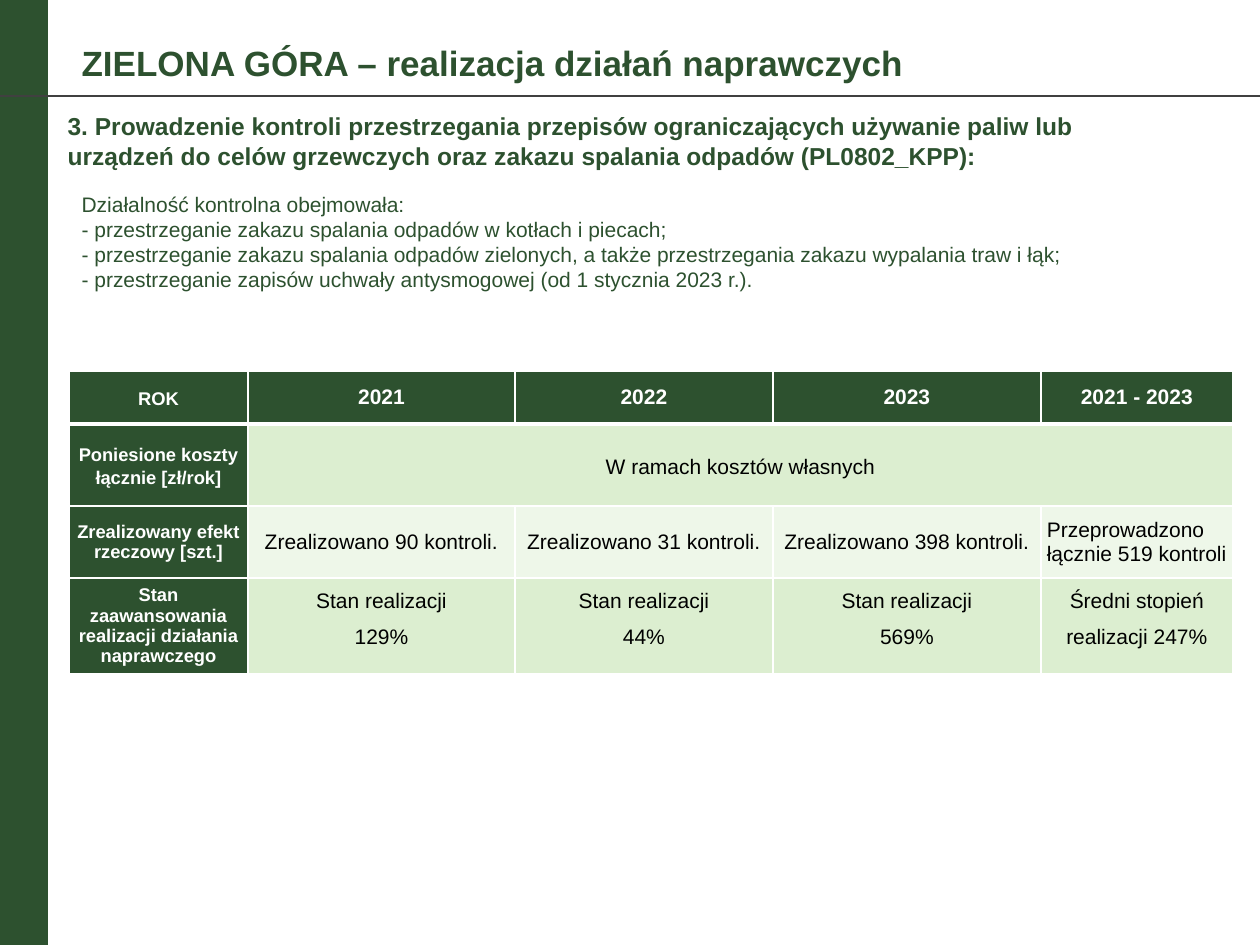
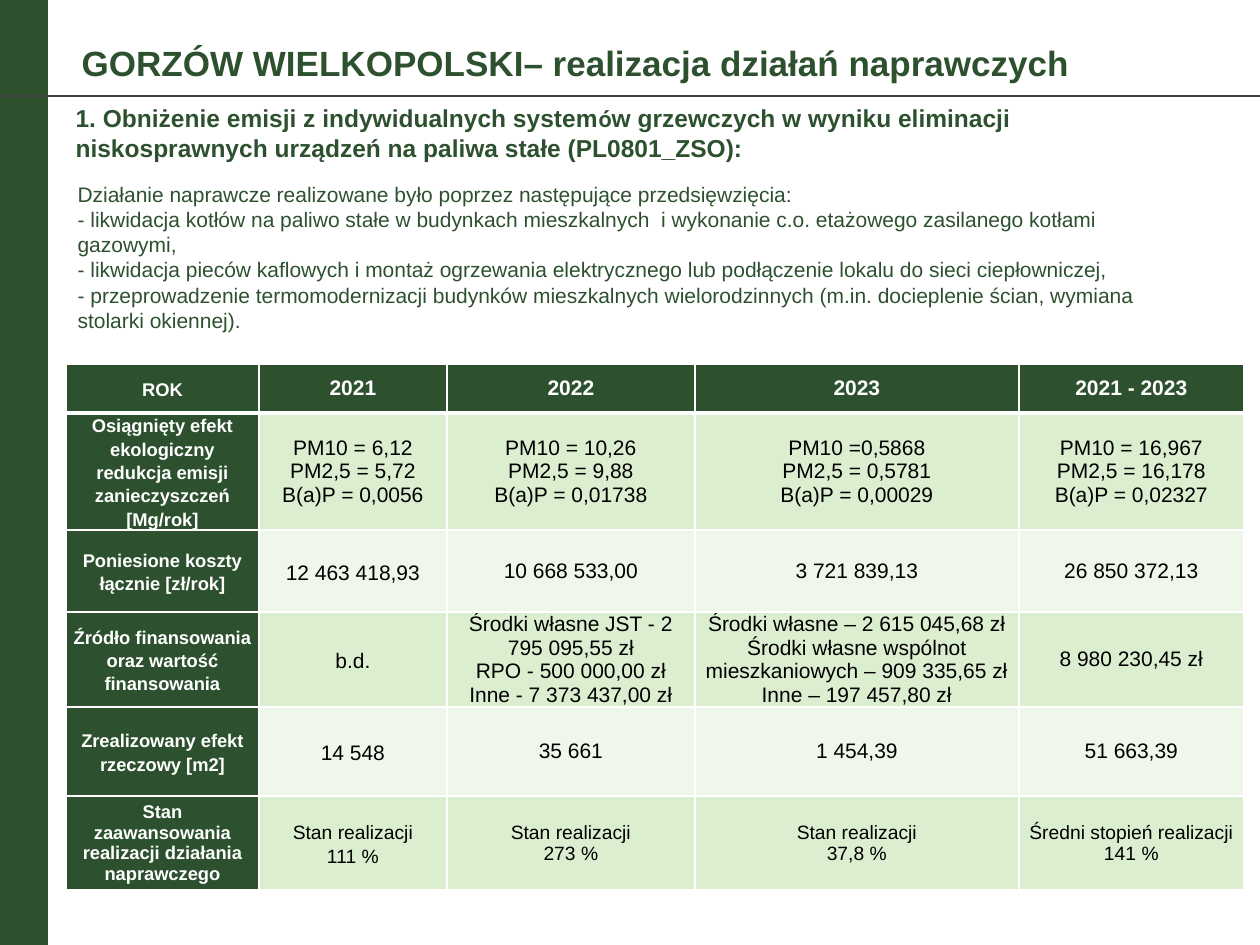
"""Build two slides on air-quality repair measures, each with a results table."""
import pptx
import pptx.util
import pptx.dml.color
import pptx.enum.shapes
import pptx.enum.text
import lxml.etree

PX = 914400 / 126
FONT = "Arial"
HUES = {"green": "2D512F", "line": "404040", "white": "FFFFFF",
        "black": "000000", "mid": "DCEED0", "pale": "EEF7E9"}
NS = "http://schemas.openxmlformats.org/drawingml/2006/main"
ALIGN = pptx.enum.text.PP_ALIGN
ANCHOR = pptx.enum.text.MSO_ANCHOR
YEARS = ["ROK", "2021", "2022", "2023", "2021 - 2023"]
STATE = "Stan zaawansowania realizacji działania naprawczego"
COSTS = "Poniesione koszty łącznie [zł/rok]"


def place(shape, *box):
    """Move a placeholder to a box in px and return its plain text frame."""
    shape.left, shape.top, shape.width, shape.height = [round(n * PX) for n in box]
    frame = shape.text_frame
    frame.auto_size = pptx.enum.text.MSO_AUTO_SIZE.NONE
    frame.word_wrap = True
    frame.vertical_anchor = ANCHOR.TOP
    return frame


def style(para, size, hue, bold=False, align=ALIGN.LEFT, gap=1.0):
    """Format a paragraph and its runs, without bullet or indent."""
    para.alignment = align
    para.line_spacing = gap
    para.space_before = para.space_after = pptx.util.Pt(0)
    props = para._p.get_or_add_pPr()
    props.set("marL", "0")
    props.set("indent", "0")
    lxml.etree.SubElement(props, f"{{{NS}}}buNone")
    for run in para.runs:
        font = run.font
        font.size = pptx.util.Pt(size)
        font.bold = bold
        font.name = font.name or FONT
        font.color.rgb = pptx.dml.color.RGBColor.from_string(HUES[hue])


PAGES = [
    {
        "title": "ZIELONA GÓRA – realizacja działań naprawczych",
        "head": [("3. Prowadzenie kontroli przestrzegania przepisów ograniczających używanie "
                  "paliw lub urządzeń do celów grzewczych oraz zakazu spalania odpadów "
                  "(PL0802_KPP):", FONT)],
        "headbox": (55, 105, 1140, 76),
        "list": ["Działalność kontrolna obejmowała:",
                 "- przestrzeganie zakazu spalania odpadów w kotłach i piecach;",
                 "- przestrzeganie zakazu spalania odpadów zielonych, a także przestrzegania "
                 "zakazu wypalania traw i łąk;",
                 "- przestrzeganie zapisów uchwały antysmogowej (od 1 stycznia 2023 r.)."],
        "listbox": (69, 185, 1126, 115),
        "spot": (69, 371),
        "cols": [179, 267, 258, 268, 192],
        "rows": [
            (53, 12, (1.15, 1, 1), YEARS),
            (82, 12, (1.15, 1.15, 1), [COSTS, "W ramach kosztów własnych"]),
            (72, 12, (1, 1, 1), ["Zrealizowany efekt rzeczowy [szt.]",
                                 "Zrealizowano 90 kontroli.", "Zrealizowano 31 kontroli.",
                                 "Zrealizowano 398 kontroli.",
                                 "Przeprowadzono łącznie 519 kontroli"]),
            (96, 12, (1, 1.5, 1.5), [STATE, "Stan realizacji\n129%", "Stan realizacji\n44%",
                                     "Stan realizacji\n569%",
                                     "Średni stopień realizacji 247%"]),
        ],
    },
    {
        "title": "GORZÓW WIELKOPOLSKI– realizacja działań naprawczych",
        "head": [("1. Obniżenie emisji z indywidualnych system", FONT), ("ó", "Calibri"),
                 ("w grzewczych w wyniku eliminacji niskosprawnych urządzeń na paliwa stałe "
                  "(PL0801_ZSO):", FONT)],
        "headbox": (63, 97, 1077, 76),
        "list": ["Działanie naprawcze realizowane było poprzez następujące przedsięwzięcia:",
                 "- likwidacja kotłów na paliwo stałe w budynkach mieszkalnych  i wykonanie "
                 "c.o. etażowego zasilanego kotłami gazowymi,",
                 "- likwidacja pieców kaflowych i montaż ogrzewania elektrycznego lub "
                 "podłączenie lokalu do sieci ciepłowniczej,",
                 "- przeprowadzenie termomodernizacji budynków mieszkalnych wielorodzinnych "
                 "(m.in. docieplenie ścian, wymiana stolarki okiennej)."],
        "listbox": (65, 175, 1135, 180),
        "spot": (66, 364),
        "cols": [193, 188, 248, 324, 225],
        "rows": [
            (49, 12, (1.15, 1, 1), YEARS),
            (117, 12, (1.15, 1, 1), [
                "Osiągnięty efekt ekologiczny redukcja emisji zanieczyszczeń [Mg/rok]",
                "PM10 = 6,12\nPM2,5 = 5,72\nB(a)P = 0,0056",
                "PM10 = 10,26\nPM2,5 = 9,88\nB(a)P = 0,01738",
                "PM10 =0,5868\nPM2,5 = 0,5781\nB(a)P = 0,00029",
                "PM10 = 16,967\nPM2,5 = 16,178\nB(a)P = 0,02327"]),
            (82, 12, (1.15, 1.15, 1), [COSTS, "12 463 418,93", "10 668 533,00",
                                       "3 721 839,13", "26 850 372,13"]),
            (95, 12, (1.15, 1.15, 1), [
                "Źródło finansowania oraz wartość finansowania", "b.d.",
                "Środki własne JST - 2 795 095,55 zł\nRPO - 500 000,00 zł\n"
                "Inne - 7 373 437,00 zł",
                "Środki własne – 2 615 045,68 zł\nŚrodki własne wspólnot "
                "mieszkaniowych – 909 335,65 zł\nInne – 197 457,80 zł",
                "8 980 230,45 zł"]),
            (89, 12, (1.15, 1.15, 1), ["Zrealizowany efekt rzeczowy [m2]", "14 548", "35 661",
                                       "1 454,39", "51 663,39"]),
            (94, 11, (1, 1.15, 1), [STATE, "Stan realizacji\n111 %", "Stan realizacji\n273 %",
                                    "Stan realizacji\n37,8 %",
                                    "Średni stopień realizacji 141 %"]),
        ],
    },
]

deck = pptx.Presentation()
deck.slide_width = round(1260 * PX)
deck.slide_height = round(945 * PX)

for page in PAGES:
    slide = deck.slides.add_slide(deck.slide_layouts[3])
    title, head, body = slide.placeholders

    band = slide.shapes.add_shape(pptx.enum.shapes.MSO_SHAPE.RECTANGLE,
                                  *[round(n * PX) for n in (-15, 0, 63, 963)])
    band.shadow.inherit = False
    band.fill.solid()
    band.fill.fore_color.rgb = pptx.dml.color.RGBColor.from_string(HUES["green"])
    band.line.fill.background()

    rule = slide.shapes.add_connector(pptx.enum.shapes.MSO_CONNECTOR.STRAIGHT,
                                      *[round(n * PX) for n in (1295, 96, -35, 96)])
    rule.line.color.rgb = pptx.dml.color.RGBColor.from_string(HUES["line"])
    rule.line.width = pptx.util.Pt(1.5)
    lxml.etree.SubElement(rule._element.spPr, f"{{{NS}}}effectLst")

    frame = place(title, 69, 35, 1096, 60)
    frame.text = page["title"]
    style(frame.paragraphs[0], 20, "green", True)
    frame.paragraphs[0].space_before = pptx.util.Pt(4)

    frame = place(head, *page["headbox"])
    for text, face in page["head"]:
        run = frame.paragraphs[0].add_run()
        run.text = text
        run.font.name = face
    style(frame.paragraphs[0], 14, "green", True)

    frame = place(body, *page["listbox"])
    frame.text = "\n".join(page["list"])
    for para in frame.paragraphs:
        style(para, 12, "green")

    rows, cols = page["rows"], page["cols"]
    box = (*page["spot"], sum(cols), sum(row[0] for row in rows))
    table = slide.shapes.add_table(len(rows), len(cols), *[round(n * PX) for n in box]).table
    for col, width in zip(table.columns, cols):
        col.width = round(width * PX)
    for r, (height, size, gaps, texts) in enumerate(rows):
        table.rows[r].height = round(height * PX)
        for c in range(len(cols)):
            cell = table.cell(r, c)
            cell.margin_left = cell.margin_right = round(6 * PX)
            cell.margin_top = cell.margin_bottom = 0
            cell.vertical_anchor = ANCHOR.TOP if c and gaps[1] == 1.5 else ANCHOR.MIDDLE
            for side in "LRTB":
                thick = (r, side) in ((0, "B"), (1, "T"))
                edge = lxml.etree.SubElement(cell._tc.get_or_add_tcPr(), f"{{{NS}}}ln{side}",
                                             w="38100" if thick else "12700")
                paint = lxml.etree.SubElement(edge, f"{{{NS}}}solidFill")
                lxml.etree.SubElement(paint, f"{{{NS}}}srgbClr", val=HUES["white"])
            dark = r == 0 or c == 0
            hue = "green" if dark else "mid" if r % 2 else "pale"
            cell.fill.solid()
            cell.fill.fore_color.rgb = pptx.dml.color.RGBColor.from_string(HUES[hue])
            if c >= len(texts):
                continue
            cell.text_frame.text = texts[c]
            align = ALIGN.LEFT if texts[c].startswith("Przeprowadzono") else ALIGN.CENTER
            for para in cell.text_frame.paragraphs:
                style(para, 10.5 if c == 0 else size, "white" if dark else "black",
                      dark, align, gaps[min(c, 2)])
        if len(texts) < len(cols):
            table.cell(r, len(texts) - 1).merge(table.cell(r, len(cols) - 1))

deck.save("out.pptx")
